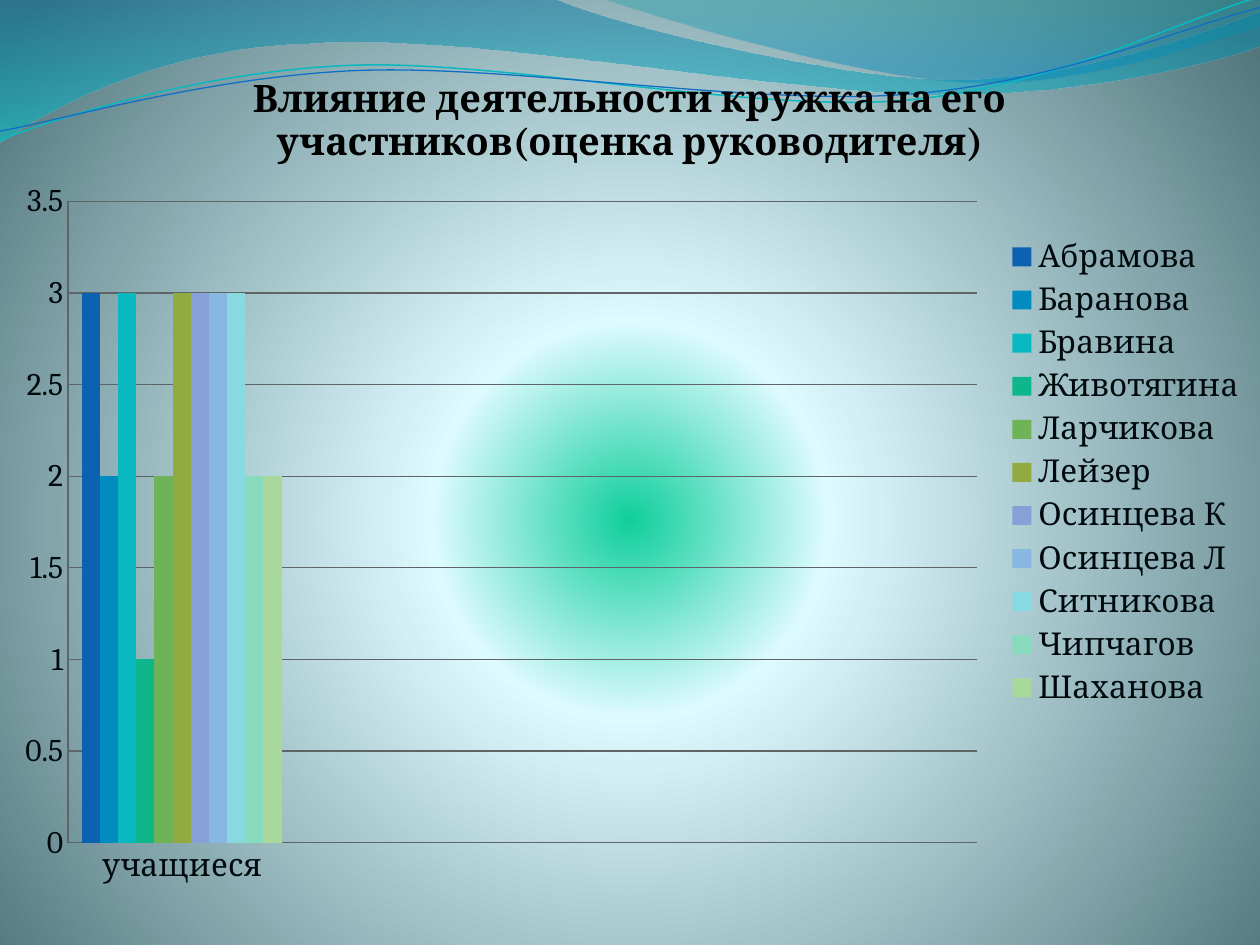
import lxml.etree
import pptx
import pptx.chart.data
import pptx.dml.color
import pptx.enum.chart
import pptx.oxml
import pptx.oxml.ns
import pptx.util

Pt = pptx.util.Pt
RGBColor = pptx.dml.color.RGBColor
qn = pptx.oxml.ns.qn

FONT = "Cambria"
BLACK = RGBColor(0x00, 0x00, 0x00)
INK = RGBColor(0x00, 0x0A, 0x0C)
GRID = RGBColor(0x5F, 0x65, 0x66)
GREEN = RGBColor(0x10, 0xCF, 0x9B)
ICE = RGBColor(0xDD, 0xFA, 0xFF)
SLATE = RGBColor(0x52, 0x76, 0x7C)
WAVE_BLUE = RGBColor(0x00, 0x74, 0xA1)
WAVE_AQUA = RGBColor(0x00, 0xC6, 0xCF)
CREST_TEAL = RGBColor(0x00, 0xA1, 0xA9)
CREST_BLUE = RGBColor(0x00, 0x8B, 0xBF)
LINE_TEAL = RGBColor(0x0A, 0xB8, 0xBF)
LINE_BLUE = RGBColor(0x0F, 0x6F, 0xC6)

MEMBERS = [
    ("Абрамова", 3, RGBColor(0x0C, 0x61, 0xB0)),
    ("Баранова", 2, RGBColor(0x00, 0x8B, 0xC1)),
    ("Бравина", 3, RGBColor(0x0A, 0xB8, 0xC1)),
    ("Животягина", 1, RGBColor(0x0E, 0xB7, 0x8A)),
    ("Ларчикова", 2, RGBColor(0x6E, 0xB3, 0x58)),
    ("Лейзер", 3, RGBColor(0x92, 0xAB, 0x41)),
    ("Осинцева К", 3, RGBColor(0x89, 0x9F, 0xD8)),
    ("Осинцева Л", 3, RGBColor(0x88, 0xB7, 0xE1)),
    ("Ситникова", 3, RGBColor(0x87, 0xDB, 0xE0)),
    ("Чипчагов", 2, RGBColor(0x88, 0xDB, 0xBD)),
    ("Шаханова", 2, RGBColor(0xA8, 0xD8, 0x9A)),
]

WAVE = [
    [(0, 0)], [(316.8, -0.7)],
    [(342.7, 12.2), (478.1, 45.4), (545.8, 45.4)],
    [(614.2, 45.4), (689.8, 18.7), (720, 6.5)],
    [(720.7, 25.9)],
    [(707.8, 31.7), (626.4, 54.7), (537.1, 54)],
    [(447.8, 54), (275, 20.2), (185, 24.5)],
    [(92.9, 25.9), (33.1, 59.8), (-0.7, 81.4)],
    [(0, 0)],
]
CREST = [
    [(344.9, -0.7)],
    [(366.5, 7.9), (491, 44.6), (553.7, 46.8)],
    [(616.3, 49.7), (691.9, 23), (720, 15.1)],
    [(720, 0)], [(344.9, -0.7)],
]
TEAL_CURVE = [
    [(0, 79.9)],
    [(34.6, 67), (113.8, 41), (199.4, 37.4)],
    [(284.4, 33.8), (427, 64.1), (513.4, 57.6)],
    [(599.8, 51.1), (675.4, 10.8), (718.6, -1.4)],
]
BLUE_CURVE = [
    [(0, 74.9)],
    [(33.8, 69.1), (118.1, 43.9), (203.8, 40.3)],
    [(290.2, 36.7), (429.8, 60.5), (516.2, 54)],
    [(601.9, 48.2), (676.8, 15.1), (720, 4.3)],
]


def gradient(stops, direction):
    marks = "".join(
        f'<a:gs pos="{position * 1000}"><a:srgbClr val="{color}">'
        f'<a:alpha val="{opacity * 1000}"/></a:srgbClr></a:gs>'
        for position, color, opacity in stops
    )
    return pptx.oxml.parse_xml(
        f'<a:gradFill {pptx.oxml.ns.nsdecls("a")} rotWithShape="1">'
        f"<a:gsLst>{marks}</a:gsLst>{direction}</a:gradFill>"
    )


def replace_solid_fill(element, fill):
    solid = element.find(".//" + qn("a:solidFill"))
    solid.getparent().replace(solid, fill)


def add_curve(slide, box, outline, closed):
    left, top = box
    segments = [[(Pt(left + x), Pt(top + y)) for x, y in part] for part in outline]
    ends = [part[-1] for part in segments]
    builder = slide.shapes.build_freeform(*ends[0])
    builder.add_line_segments(ends[1:], close=closed)
    shape = builder.convert_to_shape()
    shape.shadow.inherit = False
    lines = shape.element.findall(".//" + qn("a:lnTo"))
    for line, part in zip(lines, segments[1:]):
        if len(part) == 3:
            curve = lxml.etree.Element(qn("a:cubicBezTo"))
            for x, y in part:
                lxml.etree.SubElement(
                    curve, qn("a:pt"), x=str(x - shape.left), y=str(y - shape.top)
                )
            line.getparent().replace(line, curve)
    return shape


def add_wave(slide, box, outline, stops):
    shape = add_curve(slide, box, outline, True)
    shape.line.fill.background()
    shape.fill.solid()
    shape.fill.fore_color.rgb = BLACK
    replace_solid_fill(shape.element, gradient(stops, '<a:lin ang="5400000" scaled="1"/>'))


def add_stroke(slide, box, outline, color, width):
    shape = add_curve(slide, box, outline, False)
    shape.fill.background()
    shape.line.color.rgb = color
    shape.line.width = Pt(width)


def add_header(slide, box):
    add_wave(slide, box, WAVE, [(0, WAVE_BLUE, 45), (100, WAVE_AQUA, 55)])
    add_wave(slide, box, CREST, [(0, CREST_TEAL, 30), (80, CREST_BLUE, 45)])
    add_stroke(slide, box, TEAL_CURVE, LINE_TEAL, 0.85)
    add_stroke(slide, box, BLUE_CURVE, LINE_BLUE, 0.75)


def set_background(slide):
    slide.background.fill.solid()
    slide.background.fill.fore_color.rgb = ICE
    circle = (
        '<a:path path="circle">'
        '<a:fillToRect l="10000" t="110000" r="10000" b="100000"/></a:path>'
    )
    stops = [(0, GREEN, 100), (25, ICE, 100), (100, SLATE, 100)]
    replace_solid_fill(slide.element, gradient(stops, circle))


def format_font(font, size=18, color=INK, bold=False):
    font.name = FONT
    font.size = Pt(size)
    font.bold = bold
    font.color.rgb = color


def write_text(text_frame, text, **font_format):
    text_frame.text = text
    format_font(text_frame.paragraphs[0].font, **font_format)


def format_axis(axis):
    axis.major_tick_mark = pptx.enum.chart.XL_TICK_MARK.NONE
    axis.minor_tick_mark = pptx.enum.chart.XL_TICK_MARK.NONE
    axis.format.line.color.rgb = GRID
    axis.format.line.width = Pt(0.75)
    format_font(axis.tick_labels.font)


def place_plot(chart, box, plot_box):
    left, top, width, height = box
    x, y, plot_width, plot_height = plot_box
    shares = {
        "x": (x - left) / width, "y": (y - top) / height,
        "w": plot_width / width, "h": plot_height / height,
    }
    marks = '<c:layoutTarget val="inner"/><c:xMode val="edge"/><c:yMode val="edge"/>'
    marks += "".join(f'<c:{key} val="{share:.4f}"/>' for key, share in shares.items())
    layout = pptx.oxml.parse_xml(
        f'<c:layout {pptx.oxml.ns.nsdecls("c")}>'
        f"<c:manualLayout>{marks}</c:manualLayout></c:layout>"
    )
    plot_area = chart.element.find(".//" + qn("c:plotArea"))
    for automatic in plot_area.findall(qn("c:layout")):
        plot_area.remove(automatic)
    plot_area.insert(0, layout)


def add_rating_chart(slide, box):
    data = pptx.chart.data.CategoryChartData()
    data.categories = ["учащиеся"]
    for name, score, color in MEMBERS:
        data.add_series(name, [score, None, None, None])
    chart = slide.shapes.add_chart(
        pptx.enum.chart.XL_CHART_TYPE.COLUMN_CLUSTERED, *map(Pt, box), data
    ).chart
    format_font(chart.font, color=BLACK)
    chart.has_title = True
    write_text(
        chart.chart_title.text_frame,
        "Влияние деятельности кружка на его участников(оценка руководителя)",
        size=21.6, color=BLACK, bold=True,
    )
    chart.chart_title.include_in_layout = False
    chart.has_legend = True
    chart.legend.position = pptx.enum.chart.XL_LEGEND_POSITION.RIGHT
    chart.legend.include_in_layout = False
    format_font(chart.legend.font)

    format_axis(chart.category_axis)
    value_axis = chart.value_axis
    format_axis(value_axis)
    value_axis.minimum_scale, value_axis.maximum_scale = 0, 3.5
    value_axis.major_unit = 0.5
    value_axis.has_major_gridlines = True
    value_axis.major_gridlines.format.line.color.rgb = GRID
    value_axis.major_gridlines.format.line.width = Pt(0.75)
    place_plot(chart, box, (38.9, 115.1, 519.4, 366.6))

    plot = chart.plots[0]
    plot.gap_width = 150
    plot.overlap = 0
    plot.vary_by_categories = False
    for series, (name, score, color) in zip(plot.series, MEMBERS):
        series.format.fill.solid()
        series.format.fill.fore_color.rgb = color


def main():
    presentation = pptx.Presentation()
    presentation.slide_width, presentation.slide_height = Pt(720), Pt(540)
    slide = presentation.slides.add_slide(presentation.slide_layouts[6])
    set_background(slide)
    add_header(slide, (0, 0))
    add_rating_chart(slide, (0, 24.5, 720, 491))
    presentation.save("out.pptx")


if __name__ == "__main__":
    main()
